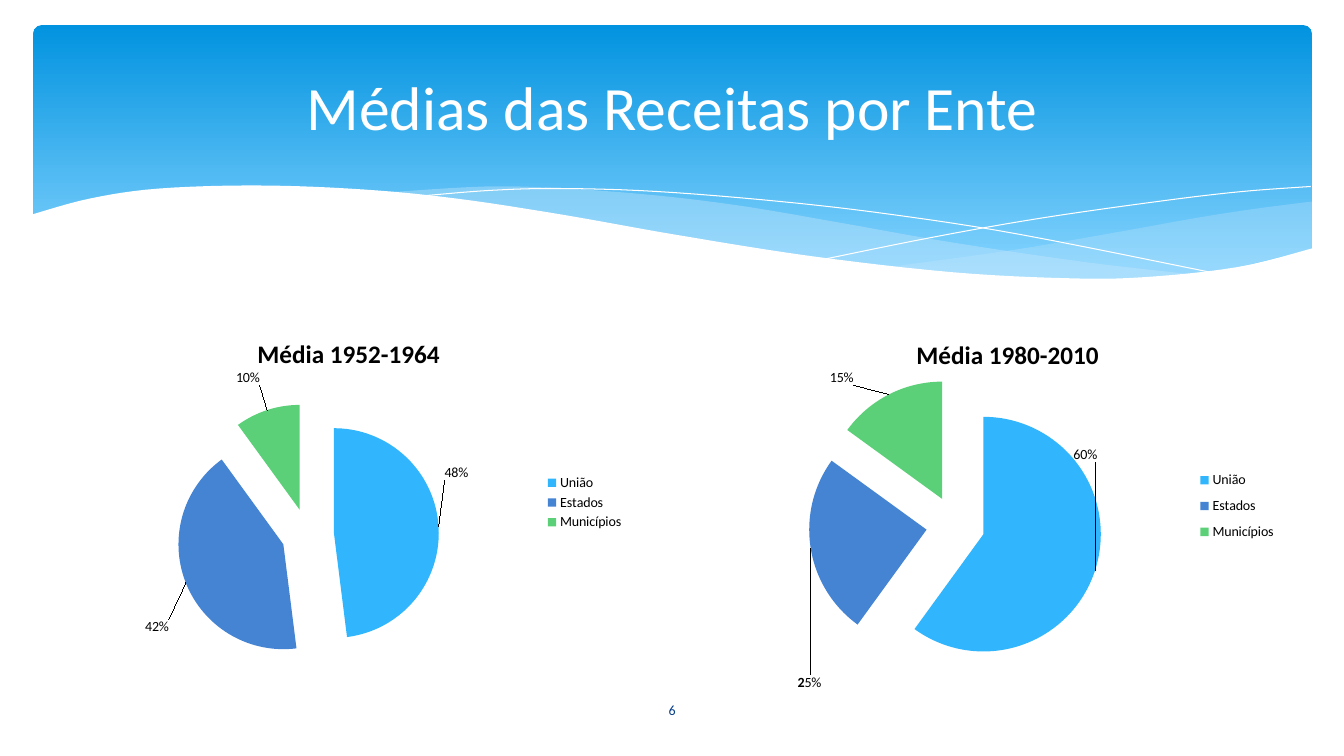
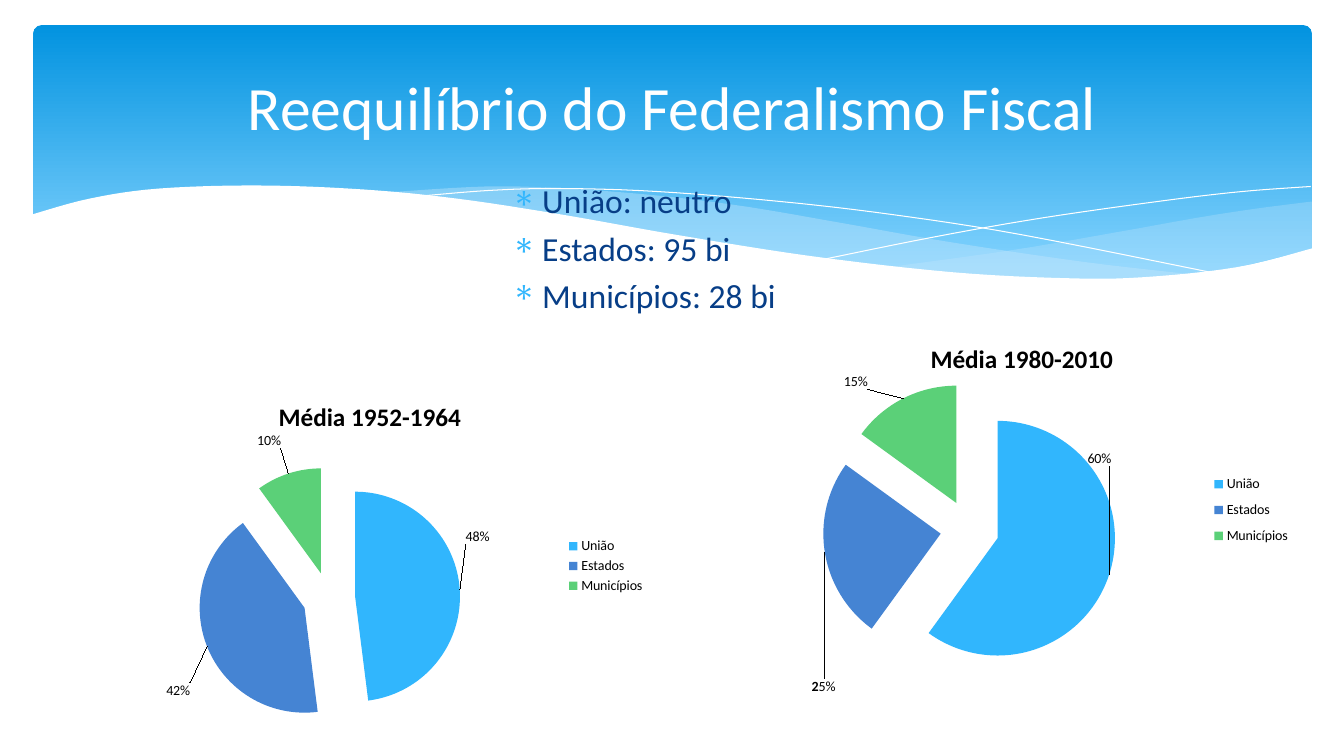
from dataclasses import dataclass
from typing import Optional

from pptx import Presentation
from pptx.chart.chart import Chart
from pptx.chart.data import CategoryChartData
from pptx.dml.color import RGBColor
from pptx.enum.chart import XL_CHART_TYPE as ChartType
from pptx.enum.chart import XL_LABEL_POSITION as LabelPosition
from pptx.enum.chart import XL_LEGEND_POSITION as LegendPosition
from pptx.enum.shapes import MSO_SHAPE as Preset
from pptx.enum.text import MSO_ANCHOR as Anchor
from pptx.enum.text import PP_ALIGN as Align
from pptx.oxml.ns import qn
from pptx.oxml.xmlchemy import OxmlElement
from pptx.shapes.autoshape import Shape
from pptx.slide import Slide
from pptx.text.text import Font
from pptx.util import Inches, Pt

# Slide grid: square cells, 13.33 columns by 7.5 rows
COLUMNS, ROWS = 13.33, 7.5
CELL = Inches(1)
FONT = "Calibri"
COLORS = {
    "white": "FFFFFF",
    "black": "000000",
    "navy": "073E87",
    "band_top": "0293E0",
    "band_bottom": "83D3FE",
    "wave": "C6E7FC",
    "union": "31B6FD",
    "states": "4584D3",
    "cities": "5BD078",
}
SLICE_COLORS = ("union", "states", "cities")
CATEGORIES = ("União", "Estados", "Municípios")
EXPLOSION = 25

Point = tuple[float, float]


@dataclass(frozen=True)
class Box:
    left: float
    top: float
    width: float
    height: float

    def lengths(self) -> list[int]:
        return [cells(n) for n in (self.left, self.top, self.width, self.height)]


@dataclass(frozen=True)
class Wave:
    """Outline made of smooth edges; closed when it has a fill."""
    edges: tuple[tuple[Point, ...], ...]
    fill: Optional[str] = None
    opacity: int = 100


@dataclass(frozen=True)
class Pie:
    """Pie chart; layouts and label offsets are shares of the chart."""
    title: str
    values: tuple[float, ...]
    width: float
    height: float
    title_at: Point
    plot: Box
    label_offsets: tuple[Point, ...]
    legend: Optional[Box] = None
    split_label: Optional[tuple[int, str, str]] = None


@dataclass(frozen=True)
class Page:
    title: str
    pies: tuple[tuple[Pie, float, float], ...]
    bullets: tuple[str, ...] = ()
    number: str = ""


BAND = Box(0.33, 0.25, 12.68, 2.7)
TITLE = Box(0.67, 0.37, 12, 1.37)
BODY = Box(4.98, 1.74, 3.24, 1.62)
NUMBER = Box(5.82, 6.84, 1.69, 0.4)

WAVES = (
    Wave((
        ((13.01, 2), (12.46, 2.07), (11.88, 2.16), (11.1, 2.3), (10.05, 2.48), (8.82, 2.65)),
        ((8.82, 2.65), (9.58, 2.72), (10.41, 2.77), (11.26, 2.77), (12.07, 2.69), (13.01, 2.47)),
    ), "wave", 29),
    Wave((
        ((11.9, 2.73), (10.76, 2.6), (9.41, 2.4), (8.39, 2.22), (7.4, 2.05),
         (6.52, 1.94), (5.6, 1.87), (4.82, 1.85), (3.82, 1.91)),
        ((3.82, 1.91), (4.83, 2.03), (5.99, 2.22), (7.55, 2.48), (9.07, 2.68),
         (10.46, 2.78), (11.18, 2.78), (11.9, 2.73)),
    ), "wave", 40),
    Wave((
        ((4.12, 1.95), (4.84, 1.89), (5.55, 1.87), (6.52, 1.9), (7.75, 2),
         (8.86, 2.13), (10.14, 2.33), (12.1, 2.72)),
    )),
    Wave((
        ((8.18, 2.57), (9.27, 2.35), (10.35, 2.16), (11.55, 1.99), (12.32, 1.9), (13, 1.85)),
    )),
    Wave((
        ((13.03, 2.46), (12.27, 2.65), (11.34, 2.75), (10.58, 2.76), (9.44, 2.7),
         (8.04, 2.54), (6.71, 2.33), (5.58, 2.13), (4.53, 1.97), (3.61, 1.88),
         (2.58, 1.84), (1.58, 1.87), (0.89, 1.97), (0.31, 2.13)),
        ((0.31, 3.29), (13.03, 3.29)),
    ), "white"),
)

EARLY = Pie(
    "Média 1952-1964", (0.48, 0.42, 0.1), 5.73, 3.77,
    title_at=(0.34, 0.05), plot=Box(0.05, 0.24, 0.77, 0.69),
    label_offsets=((0, -0.14), (-0.02, 0.09), (-0.01, -0.05)),
)
LATE = Pie(
    "Média 1980-2010", (0.6, 0.25, 0.15), 5.42, 3.78,
    title_at=(0.32, 0.04), plot=Box(0.03, 0.16, 0.74, 0.77),
    label_offsets=((-0.05, -0.33), (0.03, 0.33), (-0.06, -0.01)),
    legend=Box(0.84, 0.38, 0.15, 0.23), split_label=(1, "2", "5%"),
)

PAGES = (
    Page("Médias das Receitas por Ente",
         ((EARLY, 0.56, 3.1), (LATE, 7.31, 3.15)), number="6"),
    Page("Reequilíbrio do Federalismo Fiscal",
         ((EARLY, 0.77, 3.73), (LATE, 7.45, 3.19)),
         bullets=("União: neutro", "Estados: 95 bi", "Municípios: 28 bi")),
)


def cells(count: float) -> int:
    return round(count * CELL)


def color(name: str) -> RGBColor:
    return RGBColor.from_string(COLORS[name])


def style_font(font: Font, size: float, name: str, bold: bool = False) -> None:
    font.name, font.size, font.bold = FONT, Pt(size), bold
    font.color.rgb = color(name)


def child(tag: str, **attributes: str):
    element = OxmlElement(tag)
    for key, value in attributes.items():
        element.set(key, value)
    return element


# Background band and waves
def smooth(knots: tuple[Point, ...], steps: int = 6) -> list[Point]:
    """Catmull-Rom curve through the knots."""
    padded = (knots[0], *knots, knots[-1])
    curve = [knots[0]]
    for a, b, c, d in zip(padded, padded[1:], padded[2:], padded[3:]):
        for step in range(1, steps + 1):
            t = step / steps
            x, y = (
                (2 * q + (r - p) * t + (2 * p - 5 * q + 4 * r - s) * t**2
                 + (3 * q - p - 3 * r + s) * t**3) / 2
                for p, q, r, s in zip(a, b, c, d)
            )
            curve.append((x, y))
    return curve


def draw_wave(slide: Slide, wave: Wave) -> None:
    points = [(cells(x), cells(y)) for edge in wave.edges for x, y in smooth(edge)]
    builder = slide.shapes.build_freeform(*points[0], scale=1.0)
    builder.add_line_segments(points[1:], close=wave.fill is not None)
    shape = builder.convert_to_shape()
    shape.shadow.inherit = False
    if wave.fill is None:
        shape.fill.background()
        shape.line.color.rgb = color("white")
        shape.line.width = Pt(0)
        return
    shape.line.fill.background()
    shape.fill.solid()
    shape.fill.fore_color.rgb = color(wave.fill)
    if wave.opacity < 100:
        tint = shape.fill._xPr.find(qn("a:solidFill"))[0]
        tint.append(child("a:alpha", val=str(wave.opacity * 1000)))


def draw_background(slide: Slide) -> None:
    band = slide.shapes.add_shape(Preset.ROUNDED_RECTANGLE, *BAND.lengths())
    band.adjustments[0] = 0.03
    band.shadow.inherit = False
    band.line.fill.background()
    band.fill.gradient()
    band.fill.gradient_angle = 270
    stops = zip(band.fill.gradient_stops, ("band_top", "band_bottom"), (0, 0.9))
    for stop, name, position in stops:
        stop.color.rgb = color(name)
        stop.position = position
    for wave in WAVES:
        draw_wave(slide, wave)


# Text
def add_text(slide: Slide, box: Box, lines: tuple[str, ...], size: float, name: str,
             align: Align = Align.CENTER, anchor: Anchor = Anchor.MIDDLE) -> Shape:
    shape = slide.shapes.add_textbox(*box.lengths())
    frame = shape.text_frame
    frame.word_wrap = True
    frame.vertical_anchor = anchor
    for index, line in enumerate(lines):
        paragraph = frame.add_paragraph() if index else frame.paragraphs[0]
        paragraph.alignment = align
        run = paragraph.add_run()
        run.text = line
        style_font(run.font, size, name)
    return shape


def add_bullets(slide: Slide, lines: tuple[str, ...]) -> None:
    shape = add_text(slide, BODY, lines, 24, "navy", Align.LEFT, Anchor.TOP)
    indent = cells(0.3)
    for paragraph in shape.text_frame.paragraphs:
        paragraph.space_before = Pt(4.8)
        properties = paragraph._p.get_or_add_pPr()
        properties.set("marL", str(indent))
        properties.set("indent", str(-indent))
        bullet_color = child("a:buClr")
        bullet_color.append(child("a:srgbClr", val=COLORS["union"]))
        properties.append(bullet_color)
        properties.append(child("a:buChar", char="∗"))


# Charts
def set_layout(parent, position: int, x: float, y: float, size: Optional[Point] = None,
               edge: bool = True, inner: bool = False) -> None:
    """Place a chart part by hand, as shares of the chart."""
    for old in parent.findall(qn("c:layout")):
        parent.remove(old)
    manual = child("c:manualLayout")
    if inner:
        manual.append(child("c:layoutTarget", val="inner"))
    if edge:
        manual.append(child("c:xMode", val="edge"))
        manual.append(child("c:yMode", val="edge"))
    for key, value in zip("xywh", (x, y, *(size or ()))):
        manual.append(child(f"c:{key}", val=str(value)))
    layout = child("c:layout")
    layout.append(manual)
    parent.insert(position, layout)


def style_slices(chart: Chart, pie: Pie) -> None:
    series = chart.plots[0].series[0]
    labels = series.data_labels
    labels.show_value = True
    labels.number_format, labels.number_format_is_linked = "0%", False
    for index, (name, offset) in enumerate(zip(SLICE_COLORS, pie.label_offsets)):
        point = series.points[index]
        point.format.fill.solid()
        point.format.fill.fore_color.rgb = color(name)
        label = point.data_label
        if pie.split_label and pie.split_label[0] == index:
            paragraph = label.text_frame.paragraphs[0]
            for text, bold in zip(pie.split_label[1:], (True, False)):
                run = paragraph.add_run()
                run.text = text
                style_font(run.font, 10, "black", bold)
        label.position = LabelPosition.OUTSIDE_END
        set_layout(label._dLbl, 1, *offset, edge=False)
    first_slice = series._element.find(qn("c:dPt"))
    first_slice.addprevious(child("c:explosion", val=str(EXPLOSION)))


def add_pie(slide: Slide, pie: Pie, left: float, top: float) -> None:
    data = CategoryChartData(number_format="0%")
    data.categories = CATEGORIES
    data.add_series(pie.title, pie.values)
    box = Box(left, top, pie.width, pie.height)
    chart = slide.shapes.add_chart(ChartType.PIE, *box.lengths(), data).chart
    style_font(chart.font, 10, "black")
    chart.plots[0].vary_by_categories = True
    style_slices(chart, pie)

    chart.has_title = True
    run = chart.chart_title.text_frame.paragraphs[0].add_run()
    run.text = pie.title
    style_font(run.font, 18, "black", bold=True)
    set_layout(chart.chart_title._element, 1, *pie.title_at)

    chart.has_legend = True
    chart.legend.position = LegendPosition.RIGHT
    chart.legend.include_in_layout = False
    if pie.legend:
        area = pie.legend
        set_layout(chart.legend._element, 1, area.left, area.top, (area.width, area.height))
    plot = pie.plot
    plot_area = chart._chartSpace.find(qn("c:chart")).find(qn("c:plotArea"))
    set_layout(plot_area, 0, plot.left, plot.top, (plot.width, plot.height), inner=True)


def main() -> None:
    presentation = Presentation()
    presentation.slide_width, presentation.slide_height = cells(COLUMNS), cells(ROWS)
    blank = presentation.slide_layouts[6]
    for page in PAGES:
        slide = presentation.slides.add_slide(blank)
        draw_background(slide)
        if page.number:
            add_text(slide, NUMBER, (page.number,), 10, "navy")
        if page.bullets:
            add_bullets(slide, page.bullets)
        add_text(slide, TITLE, (page.title,), 44, "white")
        for pie, left, top in page.pies:
            add_pie(slide, pie, left, top)
    presentation.save("out.pptx")


if __name__ == "__main__":
    main()
